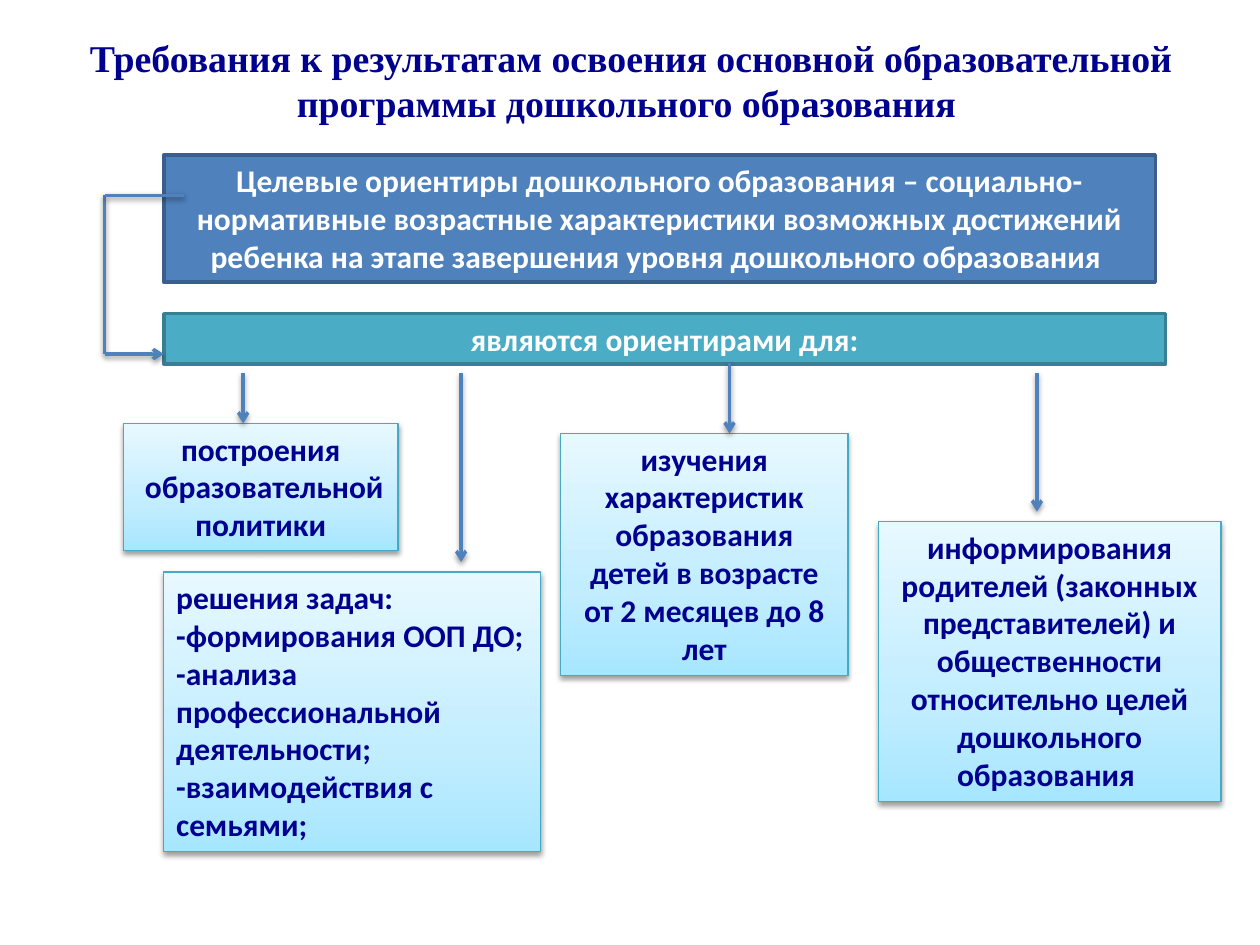
"""Build the slide on required results of the preschool education programme."""
from copy import deepcopy

from lxml import etree
from pptx import Presentation
from pptx.dml.color import RGBColor
from pptx.enum import shapes, text
from pptx.oxml import ns
from pptx.util import Inches, Pt

COLORS = {
    "navy": "000090", "white": "FFFFFF", "black": "000000",
    "blue": "4F81BD", "blue_edge": "3A5F8C",
    "teal": "4BACC6", "teal_edge": "377F92", "card_edge": "46AAC5",
}
CARD_STOPS = [(0, "A7E6FF"), (0.35, "C1EDFF"), (1, "E7F8FF")]
SHADOW = {"blurRad": Pt(3.1), "dist": Pt(1.6), "dir": 90 * 60000, "rotWithShape": 0}
SHADOW_ALPHA = 38000

TITLE = ("Требования к результатам освоения основной образовательной "
         "программы дошкольного образования ")
TITLE_BOX = (0.51, 0.21, 9, 0.85)
BANNERS = [
    ((1.3, 1.23, 7.87, 1.01), "blue", "blue_edge",
     "Целевые ориентиры дошкольного образования – социально-нормативные "
     "возрастные характеристики возможных достижений ребенка на этапе "
     "завершения уровня дошкольного образования "),
    ((1.3, 2.49, 7.95, 0.4), "teal", "teal_edge", "являются ориентирами для:"),
]
CARDS = [
    {"box": (0.98, 3.36, 2.18, 1.01), "wrap": False, "align": "CENTER",
     "lines": ["построения", " образовательной", " политики "]},
    {"box": (1.3, 4.54, 2.99, 2.22), "wrap": True, "align": "LEFT",
     "lines": ["решения задач:", "-формирования ООП ДО;",
               "-анализа профессиональной деятельности;",
               "-взаимодействия с семьями;"]},
    {"box": (4.45, 3.44, 2.28, 1.92), "wrap": True, "align": "CENTER",
     "lines": ["изучения характеристик образования детей в возрасте "
               "от 2 месяцев до 8 лет"]},
    {"box": (6.97, 4.14, 2.72, 2.22), "wrap": True, "align": "CENTER",
     "lines": ["информирования родителей (законных представителей) и "
               "общественности относительно целей дошкольного образования "]},
]
DOWN_ARROWS = [(8.23, 2.96, 4.06), (5.79, 2.88, 3.44), (3.66, 2.96, 4.46), (1.93, 2.96, 3.36)]
BRACKET = {"left": 0.83, "top": 1.55, "bottom": 2.81, "top_end": 1.46, "arrow_end": 1.3}


def rgb(name):
    return RGBColor.from_string(COLORS[name])


def write(shape, lines, color, size=18, font="Calibri", align="CENTER",
          wrap=True, anchor="TOP", autosize="SHAPE_TO_FIT_TEXT"):
    frame = shape.text_frame
    frame.text = "\n".join(lines)
    settings = {"word_wrap": wrap, "vertical_anchor": text.MSO_ANCHOR[anchor],
                "auto_size": text.MSO_AUTO_SIZE[autosize]}
    for key, value in settings.items():
        setattr(frame, key, value)
    for paragraph in frame.paragraphs:
        paragraph.alignment = text.PP_ALIGN[align]
        run_font = paragraph.runs[0].font
        for key, value in {"name": font, "size": Pt(size), "bold": True}.items():
            setattr(run_font, key, value)
        run_font.color.rgb = rgb(color)


def outline(part, color, width):
    part.line.color.rgb = rgb(color)
    part.line.width = Pt(width)


def add_shadow(properties):
    effects = properties.find(ns.qn("a:effectLst"))
    if effects is None:
        effects = etree.SubElement(properties, ns.qn("a:effectLst"))
    outer = etree.SubElement(effects, ns.qn("a:outerShdw"),
                             {key: str(value) for key, value in SHADOW.items()})
    tint = etree.SubElement(outer, ns.qn("a:srgbClr"), val=COLORS["black"])
    etree.SubElement(tint, ns.qn("a:alpha"), val=str(SHADOW_ALPHA))


def add_rectangle(slide, box, edge, width):
    rectangle = slide.shapes.add_shape(shapes.MSO_SHAPE.RECTANGLE, *map(Inches, box))
    rectangle.shadow.inherit = False
    outline(rectangle, edge, width)
    return rectangle


def fill_card(card):
    card.fill.gradient()
    card.fill.gradient_angle = 90
    stop_list = card.fill._fill._gradFill.find(ns.qn("a:gsLst"))
    stop_list.insert(1, deepcopy(stop_list[0]))
    for stop, (position, color) in zip(card.fill.gradient_stops, CARD_STOPS):
        stop.position = position
        stop.color.rgb = RGBColor.from_string(color)


def add_line(slide, start, end, arrow=False):
    line = slide.shapes.add_connector(
        shapes.MSO_CONNECTOR.STRAIGHT, *map(Inches, start + end))
    outline(line, "blue", 2)
    if arrow:
        etree.SubElement(line.line._get_or_add_ln(), ns.qn("a:tailEnd"), type="arrow")
    add_shadow(line._element.spPr)


def main():
    deck = Presentation()
    deck.slide_width, deck.slide_height = Inches(10), Inches(7.5)
    slide = deck.slides.add_slide(deck.slide_layouts[6])

    title = slide.shapes.add_textbox(*map(Inches, TITLE_BOX))
    write(title, [TITLE], "navy", size=21.6, font="Times New Roman",
          anchor="MIDDLE", autosize="NONE")

    for box, fill, edge, wording in BANNERS:
        banner = add_rectangle(slide, box, edge, 2)
        banner.fill.solid()
        banner.fill.fore_color.rgb = rgb(fill)
        write(banner, [wording], "white")

    for content in CARDS:
        card = add_rectangle(slide, content["box"], "card_edge", 0.75)
        fill_card(card)
        add_shadow(card._element.spPr)
        write(card, content["lines"], "navy", align=content["align"], wrap=content["wrap"])

    for x, top, bottom in DOWN_ARROWS:
        add_line(slide, (x, top), (x, bottom), arrow=True)

    upper = (BRACKET["left"], BRACKET["top"])
    lower = (BRACKET["left"], BRACKET["bottom"])
    add_line(slide, upper, lower)
    add_line(slide, lower, (BRACKET["arrow_end"], BRACKET["bottom"]), arrow=True)
    add_line(slide, (BRACKET["top_end"], BRACKET["top"]), upper)

    deck.save("out.pptx")


if __name__ == "__main__":
    main()
